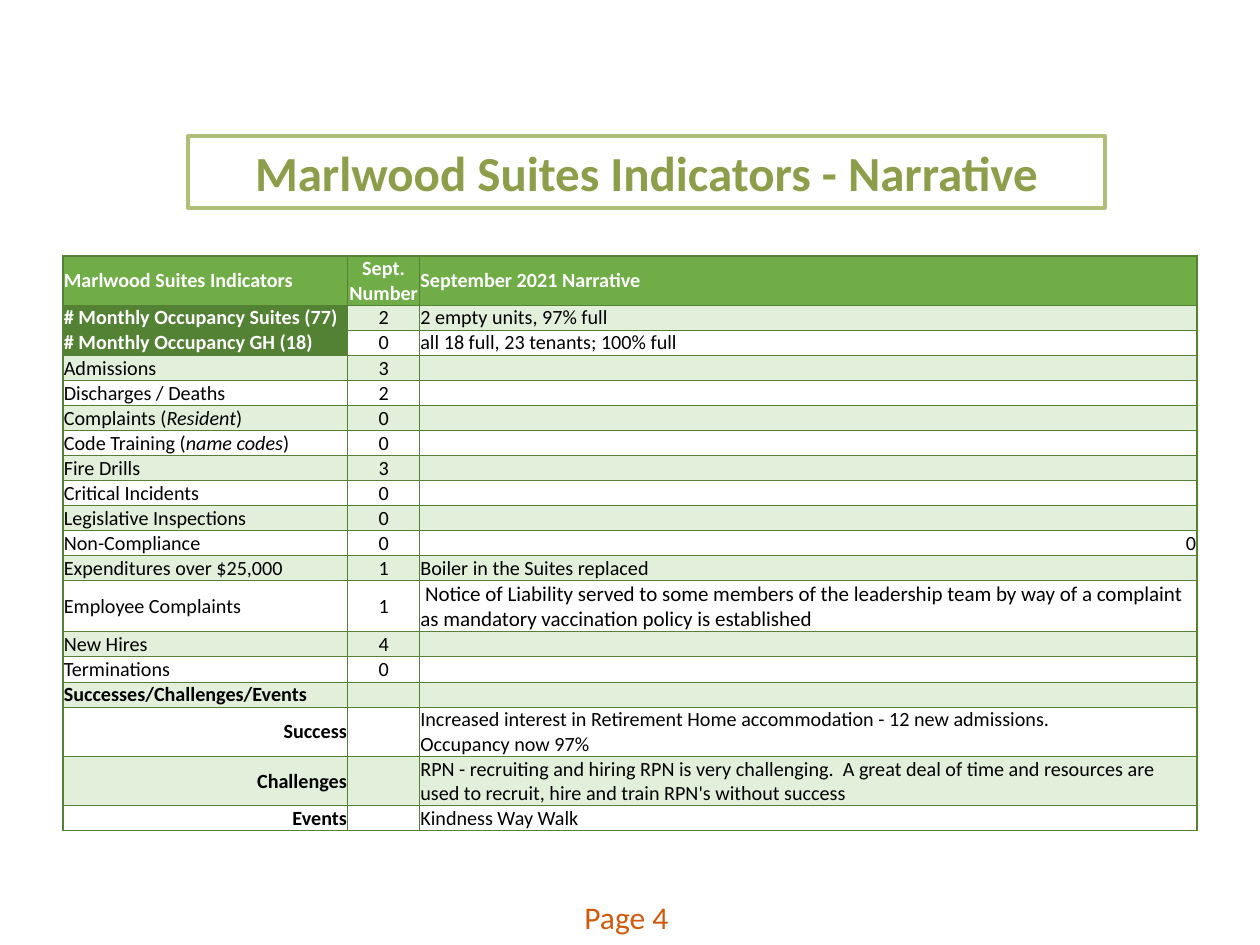
import pptx
import pptx.dml.color
import pptx.enum.text
import pptx.oxml.ns
import pptx.util
from dataclasses import dataclass
from lxml import etree

Inches = pptx.util.Inches
Pt = pptx.util.Pt
Align = pptx.enum.text.PP_ALIGN
Anchor = pptx.enum.text.MSO_ANCHOR
AutoSize = pptx.enum.text.MSO_AUTO_SIZE
qn = pptx.oxml.ns.qn


@dataclass(frozen=True)
class Theme:
    font: str = "Calibri"
    white: str = "FFFFFF"
    black: str = "000000"
    title: str = "8C9E4A"
    title_border: str = "AFBF76"
    page: str = "CF5A0B"
    header: str = "70AD47"
    dark: str = "548235"
    band: str = "E2EFDA"
    title_size: float = 28
    page_size: float = 18
    table_size: float = 11.5
    notice_size: float = 12


THEME = Theme()
COLUMN_WIDTHS = (2.26, 0.57, 6.17)
LINE_HEIGHT = 0.19
CELL_MARGIN = Pt(0.5)
OCCUPANCY_ROWS = (1, 2)
NOTICE_ROW = 12
SECTION_ROW = 15

# Asterisks enclose italic words; \v breaks a line and \n starts a paragraph.
ROWS = [
    ("Marlwood Suites Indicators", "Sept.\vNumber", "September 2021 Narrative"),
    ("# Monthly Occupancy Suites (77)", "2", "2 empty units, 97% full"),
    ("# Monthly Occupancy GH (18)", "0", "all 18 full, 23 tenants; 100% full"),
    ("Admissions", "3", ""),
    ("Discharges / Deaths", "2", ""),
    ("Complaints (*Resident*)", "0", ""),
    ("Code Training (*name codes*)", "0", ""),
    ("Fire Drills", "3", ""),
    ("Critical Incidents", "0", ""),
    ("Legislative Inspections", "0", ""),
    ("Non-Compliance", "0", "0"),
    ("Expenditures over $25,000", "1", "Boiler in the Suites replaced"),
    ("Employee Complaints", "1",
     " Notice of Liability served to some members of the leadership team by way of "
     "a complaint as mandatory vaccination policy is established"),
    ("New Hires", "4", ""),
    ("Terminations", "0", ""),
    ("Successes/Challenges/Events", "", ""),
    ("Success", "",
     "Increased interest in Retirement Home accommodation - 12 new admissions.\n"
     "Occupancy now 97%"),
    ("Challenges", "",
     "RPN - recruiting and hiring RPN is very challenging.  A great deal of time and "
     "resources are used to recruit, hire and train RPN's without success"),
    ("Events", "", "Kindness Way Walk"),
]
TWO_LINE_ROWS = (0, 12, 16, 17)


def rgb(value):
    return pptx.dml.color.RGBColor.from_string(value)


def set_values(target, values):
    for name, value in values.items():
        setattr(target, name, value)


def write_text(paragraph, text, size, color, bold=False):
    for index, part in enumerate(text.split("*")):
        for number, line in enumerate(part.split("\v")):
            if number:
                paragraph.add_line_break()
            run = paragraph.add_run()
            run.text = line
            set_values(run.font, {"name": THEME.font, "size": Pt(size), "bold": bold})
            if index % 2:
                run.font.italic = True
            run.font.color.rgb = rgb(color)


def add_title(slide, left, top, width, height):
    title = slide.shapes.title
    set_values(title, {"left": left, "top": top, "width": width, "height": height})
    title.fill.solid()
    title.fill.fore_color.rgb = rgb(THEME.white)
    title.line.color.rgb = rgb(THEME.title_border)
    title.line.width = Pt(2)
    set_values(title.text_frame, {"word_wrap": True, "vertical_anchor": Anchor.MIDDLE,
                                  "auto_size": AutoSize.NONE})
    paragraph = title.text_frame.paragraphs[0]
    paragraph.alignment = Align.CENTER
    write_text(paragraph, "Marlwood Suites Indicators - Narrative",
               THEME.title_size, THEME.title, True)


def add_page_label(slide, left, top, width, height):
    frame = slide.shapes.add_textbox(left, top, width, height).text_frame
    frame.word_wrap = True
    write_text(frame.paragraphs[0], "Page 4", THEME.page_size, THEME.page)


def set_borders(cell, widths):
    properties = cell._tc.get_or_add_tcPr()
    for side, width in widths.items():
        line = etree.SubElement(properties, qn(f"a:ln{side}"), w=str(Pt(width)))
        fill = etree.SubElement(line, qn("a:solidFill"))
        etree.SubElement(fill, qn("a:srgbClr"), val=THEME.dark)


def cell_colors(row, column):
    """Return the fill and text colours of a cell."""
    if row == 0:
        return THEME.header, THEME.white
    if row in OCCUPANCY_ROWS and column == 0:
        return THEME.dark, THEME.white
    return (THEME.band if row % 2 else THEME.white), THEME.black


def cell_alignment(row, column, text):
    if column == 1:
        return Align.CENTER
    if (column == 0 and row > SECTION_ROW) or (column == 2 and text.isdigit()):
        return Align.RIGHT
    return Align.LEFT


def format_cell(cell, row, column, text):
    set_values(cell, {"margin_left": CELL_MARGIN, "margin_top": CELL_MARGIN,
                      "margin_right": CELL_MARGIN, "margin_bottom": 0,
                      "vertical_anchor": Anchor.MIDDLE})
    set_borders(cell, {"L": 1 if column == 0 else 0.5,
                       "R": 1 if column == len(COLUMN_WIDTHS) - 1 else 0.5,
                       "T": 1 if row == 0 else 0.5,
                       "B": 1 if row == len(ROWS) - 1 else 0.5})
    fill_color, text_color = cell_colors(row, column)
    cell.fill.solid()
    cell.fill.fore_color.rgb = rgb(fill_color)

    bold = row == 0 or (column == 0 and (row in OCCUPANCY_ROWS or row >= SECTION_ROW))
    notice = row == NOTICE_ROW and column == 2
    size = THEME.notice_size if notice else THEME.table_size
    for index, line in enumerate(text.split("\n")):
        frame = cell.text_frame
        paragraph = frame.add_paragraph() if index else frame.paragraphs[0]
        paragraph.alignment = cell_alignment(row, column, text)
        if line:
            write_text(paragraph, line, size, text_color, bold)
        else:  # keeps an empty cell from stretching its row
            etree.SubElement(paragraph._p, qn("a:endParaRPr"), sz=str(int(size * 100)))


def add_indicator_table(slide, left, top, width, height):
    frame = slide.shapes.add_table(len(ROWS), len(COLUMN_WIDTHS), left, top, width, height)
    table = frame.table
    for column, column_width in zip(table.columns, COLUMN_WIDTHS):
        column.width = Inches(column_width)
    for row, texts in enumerate(ROWS):
        table.rows[row].height = Inches(LINE_HEIGHT * (2 if row in TWO_LINE_ROWS else 1))
        for column, text in enumerate(texts):
            format_cell(table.cell(row, column), row, column, text)


def main():
    presentation = pptx.Presentation()
    set_values(presentation, {"slide_width": Inches(10), "slide_height": Inches(7.5)})
    slide = presentation.slides.add_slide(presentation.slide_layouts.get_by_name("Title Only"))
    add_page_label(slide, Inches(4.54), Inches(7.08), Inches(2.33), Inches(0.4))
    add_title(slide, Inches(1.49), Inches(1.08), Inches(7.28), Inches(0.57))
    add_indicator_table(slide, Inches(0.5), Inches(2.03), Inches(9), Inches(4.57))
    presentation.save("out.pptx")


if __name__ == "__main__":
    main()
